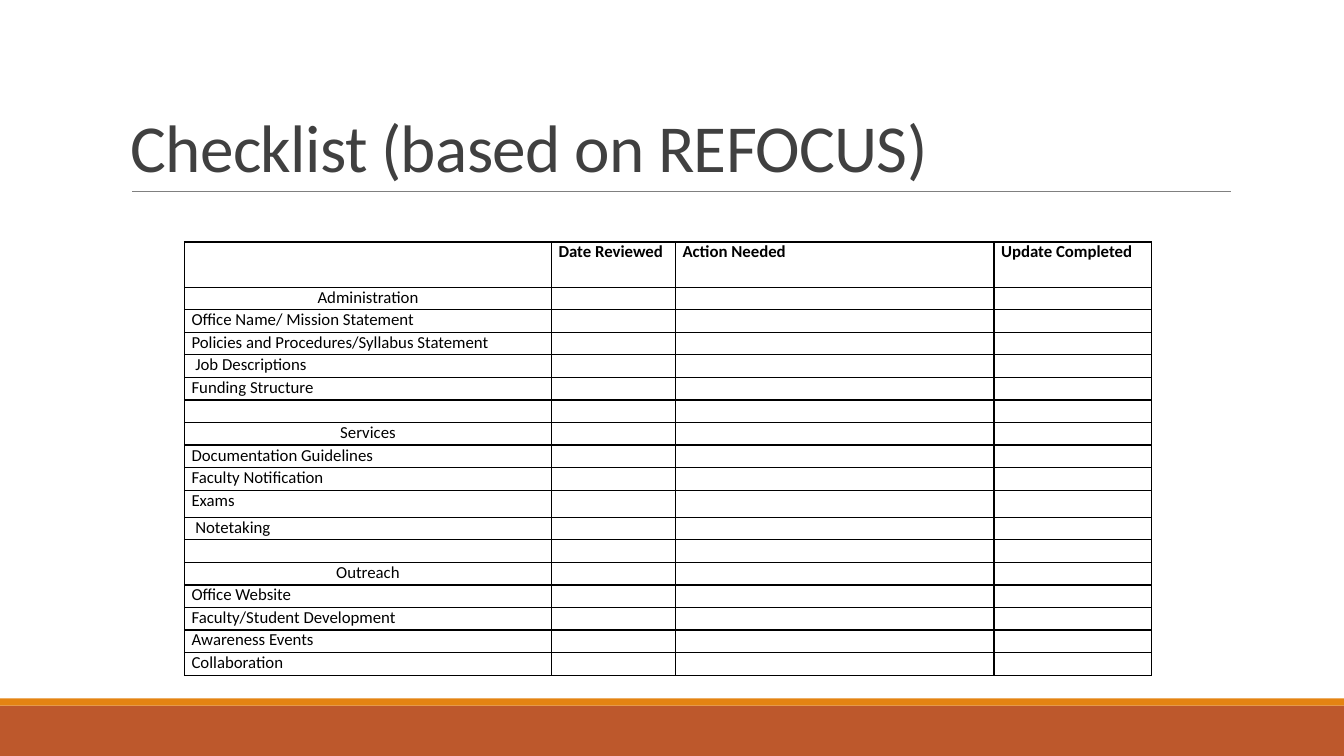
import pptx
import pptx.util
import pptx.dml.color
import pptx.enum.shapes
import pptx.enum.text
import pptx.oxml.ns
import lxml.etree
from dataclasses import dataclass

Inches = pptx.util.Inches
Pt = pptx.util.Pt
qn = pptx.oxml.ns.qn
Align = pptx.enum.text.PP_ALIGN
Anchor = pptx.enum.text.MSO_ANCHOR


@dataclass
class Theme:
    font: str = "Calibri"
    title: str = "404040"
    body: str = "000000"
    rule: str = "808080"
    base: str = "BD582C"
    strip: str = "E48312"
    big: float = 48
    small: float = 12


HEADS = ["", "Date Reviewed", "Action Needed", "Update Completed"]
GROUPS = {
    "Administration": ["Office Name/ Mission Statement",
                       "Policies and Procedures/Syllabus Statement",
                       " Job Descriptions", "Funding Structure", ""],
    "Services": ["Documentation Guidelines", "Faculty Notification",
                 "Exams", " Notetaking", ""],
    "Outreach": ["Office Website", "Faculty/Student Development",
                 "Awareness Events", "Collaboration"],
}
WIDTHS = [3.64, 1.23, 3.16, 1.56]
HEAD_ROW, EXAM_ROW, ROW = 0.45, 0.27, 0.224


def color(code):
    return pptx.dml.color.RGBColor.from_string(code)


class Deck:
    def __init__(self, theme):
        self.theme = theme
        self.file = pptx.Presentation()
        self.file.slide_width = Inches(13.33)
        self.file.slide_height = Inches(7.5)
        self.slide = self.file.slides.add_slide(self.file.slide_layouts[6])

    def band(self, top, height, fill):
        bar = self.slide.shapes.add_shape(
            pptx.enum.shapes.MSO_SHAPE.RECTANGLE,
            0, Inches(top), self.file.slide_width, Inches(height))
        bar.shadow.inherit = False
        bar.fill.solid()
        bar.fill.fore_color.rgb = color(fill)
        bar.line.fill.background()

    def rule(self, left, right, top):
        line = self.slide.shapes.add_connector(
            pptx.enum.shapes.MSO_CONNECTOR.STRAIGHT,
            Inches(left), Inches(top), Inches(right), Inches(top))
        line.line.color.rgb = color(self.theme.rule)
        line.line.width = Pt(0.5)
        props = line._element.spPr
        lxml.etree.SubElement(props, qn("a:effectLst"))

    def style(self, para, size, tint, bold=False):
        for run in para.runs:
            run.font.name = self.theme.font
            run.font.size = Pt(size)
            run.font.bold = bold
            run.font.color.rgb = color(tint)

    def title(self, text, left, top, width, height):
        box = self.slide.shapes.add_textbox(
            Inches(left), Inches(top), Inches(width), Inches(height))
        frame = box.text_frame
        frame.word_wrap = True
        frame.vertical_anchor = Anchor.BOTTOM
        frame.text = text
        para = frame.paragraphs[0]
        para.line_spacing = 0.85
        self.style(para, self.theme.big, self.theme.title)
        para.runs[0].font._element.set("spc", "-50")

    def border(self, cell):
        props = cell._tc.get_or_add_tcPr()
        for spot, side in enumerate(["lnL", "lnR", "lnT", "lnB"]):
            line = lxml.etree.Element(qn("a:" + side), w=str(Pt(1)))
            fill = lxml.etree.SubElement(line, qn("a:solidFill"))
            lxml.etree.SubElement(fill, qn("a:srgbClr"), val=self.theme.body)
            props.insert(spot, line)

    def cell(self, cell, text, bold, align):
        cell.margin_left = cell.margin_right = Inches(0.07)
        cell.margin_top = cell.margin_bottom = 0
        cell.fill.background()
        self.border(cell)
        cell.text_frame.text = text
        para = cell.text_frame.paragraphs[0]
        para.alignment = align
        self.style(para, self.theme.small, self.theme.body, bold)
        if not text:
            # An empty cell needs a small type size to keep its row low
            lxml.etree.SubElement(para._p, qn("a:endParaRPr"),
                                  sz=str(int(self.theme.small * 100)))

    def table(self, rows, widths, heights, left, top):
        grid = self.slide.shapes.add_table(
            len(rows), len(widths), Inches(left), Inches(top),
            Inches(sum(widths)), Inches(sum(heights))).table
        grid.first_row = grid.horz_banding = False
        for col, width in zip(grid.columns, widths):
            col.width = Inches(width)
        for y, (texts, height) in enumerate(zip(rows, heights)):
            grid.rows[y].height = Inches(height)
            for x, text in enumerate(texts):
                align = Align.CENTER if text in GROUPS else Align.LEFT
                self.cell(grid.cell(y, x), text, y == 0, align)


def main():
    theme = Theme()
    deck = Deck(theme)

    # Footer bands
    deck.band(7, 0.5, theme.base)
    deck.band(6.93, 0.07, theme.strip)

    # Title and rule
    deck.rule(1.31, 12.21, 1.9)
    deck.title("Checklist (based on REFOCUS)", 1.2, 0.31, 11, 1.59)

    # Checklist
    names = [name for group, items in GROUPS.items()
             for name in [group, *items]]
    rows = [HEADS] + [[name, "", "", ""] for name in names]
    heights = [HEAD_ROW] + [EXAM_ROW if name == "Exams" else ROW
                            for name in names]
    deck.table(rows, WIDTHS, heights, 1.83, 2.4)

    deck.file.save("out.pptx")


if __name__ == "__main__":
    main()
